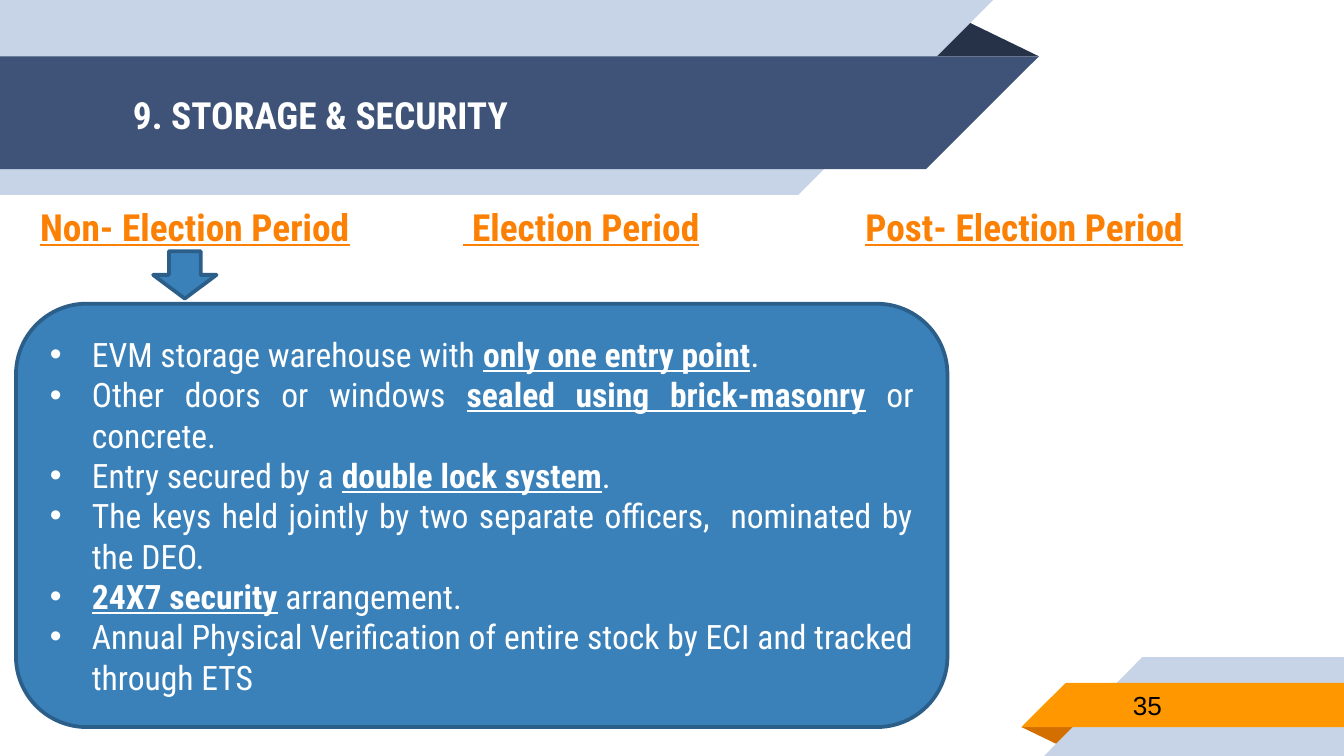
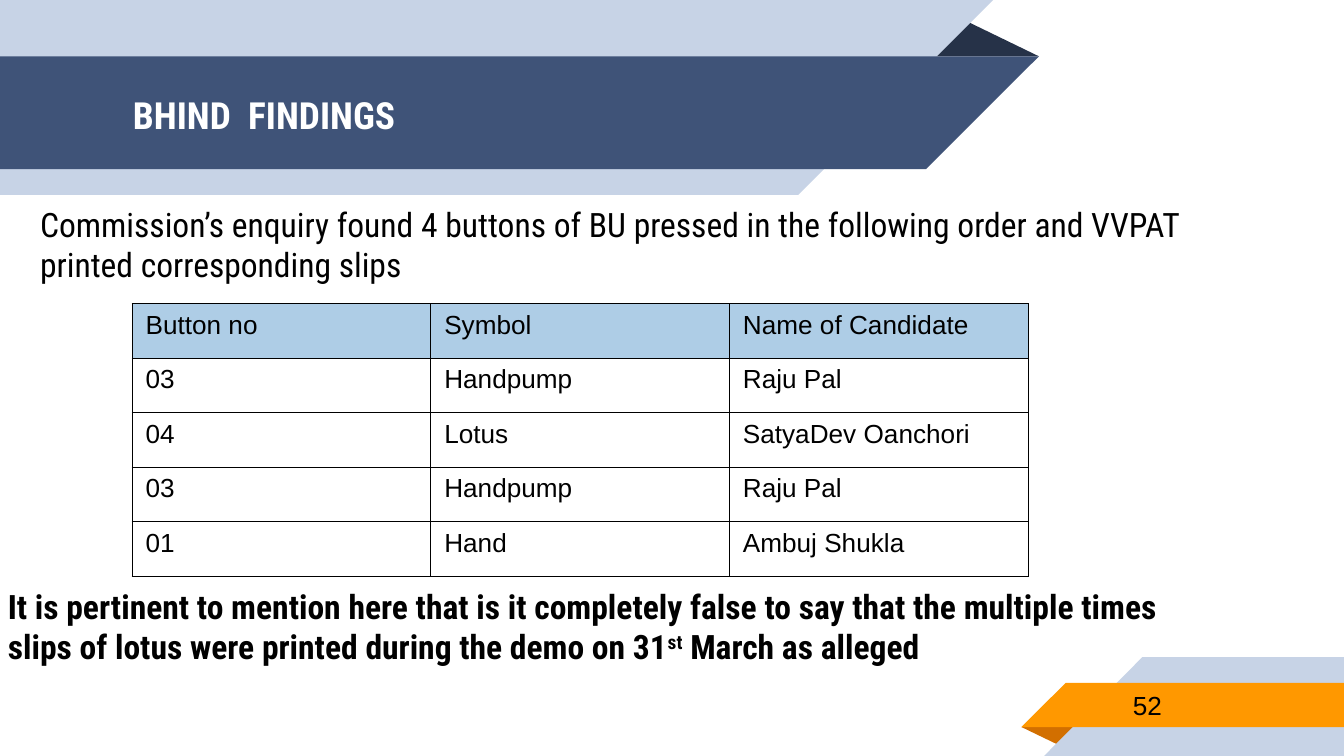
"""Build two slides on voting machine storage and the Bhind enquiry findings."""
from lxml import etree
from pptx import Presentation
from pptx.dml.color import RGBColor
from pptx.enum.shapes import MSO_SHAPE
from pptx.enum.text import MSO_ANCHOR, PP_ALIGN
from pptx.oxml.ns import qn
from pptx.util import Pt

ROUNDED = MSO_SHAPE.ROUNDED_RECTANGLE
DOWN_ARROW = MSO_SHAPE.DOWN_ARROW
MIDDLE = MSO_ANCHOR.MIDDLE
LEFT, JUSTIFY = PP_ALIGN.LEFT, PP_ALIGN.JUSTIFY

COLORS = {
    "pale": "C7D3E6", "navy": "3F5378", "navy_fold": "263248",
    "orange": "FF9800", "orange_fold": "D26F00", "heading": "FC8004",
    "blue": "3A81BA", "blue_edge": "2B5F8A", "table_head": "AECDE6",
    "white": "FFFFFF", "black": "000000",
}
HEAD_FONT, PLAIN_FONT = "Roboto Condensed", "Arial"

BANDS = [
    ("navy_fold", [(495.4, 30.2), (556.6, 30.2), (515.2, 10.1)]),
    ("pale", [(0, 0), (532.1, 0), (427.7, 104.4), (0, 104.4)]),
    ("navy", [(0, 30.2), (556.6, 30.2), (496.1, 90.7), (0, 90.7)]),
    ("orange_fold", [(547.2, 389.5), (578.2, 389.5), (568.1, 399.6)]),
    ("pale", [(559.4, 405), (612, 352.1), (720, 352.1), (720, 405)]),
    ("orange", [(547.2, 389.5), (571, 365.8), (720, 365.8), (720, 389.5)]),
]
PERIODS = [
    ("Non- Election Period", 14.4, 266),
    (" Election Period", 241.2, 210),
    ("Post- Election Period", 456.5, 244),
]
STORAGE_RULES = [
    [("EVM storage warehouse with ", False), ("only one entry point", True), (".", False)],
    [("Other doors or windows ", False), ("sealed using brick-masonry", True),
     (" or concrete.", False)],
    [("Entry secured by a ", False), ("double lock system", True), (".", False)],
    [("The keys held jointly by two separate officers,  nominated by the DEO.", False)],
    [("24X7 security", True), (" arrangement.", False)],
    [("Annual Physical Verification of entire stock by ECI and tracked through ETS", False)],
]
BUTTON_ORDER = [
    ("Button no", "Symbol", "Name of Candidate"),
    ("03", "Handpump", "Raju Pal"),
    ("04", "Lotus", "SatyaDev Oanchori"),
    ("03", "Handpump", "Raju Pal"),
    ("01", "Hand", "Ambuj Shukla"),
]


def rgb(name):
    """Return the named colour."""
    return RGBColor.from_string(COLORS[name])


def style(paragraph, size, color="black", name=HEAD_FONT, bold=False, underline=False):
    """Set the font of a whole paragraph."""
    font = paragraph.font
    font.name, font.size = name, Pt(size)
    font.bold, font.underline = bold, underline
    font.color.rgb = rgb(color)


def paint(shape, fill, edge=None):
    """Fill a shape and draw its 2 pt edge, if any."""
    shape.shadow.inherit = False
    shape.fill.solid()
    shape.fill.fore_color.rgb = rgb(fill)
    if edge:
        shape.line.color.rgb = rgb(edge)
        shape.line.width = Pt(2)
    else:
        shape.line.fill.background()


def prepare_layout(layout, slide):
    """Draw the header and footer bands and move them to the layout."""
    for holder in list(layout.placeholders)[1:]:
        layout.shapes.element.remove(holder.element)
    for color, corners in BANDS:
        (start_x, start_y), *others = [(Pt(x), Pt(y)) for x, y in corners]
        outline = slide.shapes.build_freeform(start_x, start_y)
        outline.add_line_segments(others)
        band = outline.convert_to_shape()
        paint(band, color)
        layout.shapes.element.append(band.element)


def add_text(slide, text, left, top, width, height, size, **font):
    """Add a wrapping text box and return its paragraph."""
    box = slide.shapes.add_textbox(Pt(left), Pt(top), Pt(width), Pt(height))
    box.text_frame.word_wrap = True
    paragraph = box.text_frame.paragraphs[0]
    paragraph.text = text
    style(paragraph, size, **font)
    return paragraph


def set_frame(slide, heading, number):
    """Fill in the title and the slide number."""
    title = slide.shapes.title
    title.left, title.top, title.width, title.height = Pt(64), Pt(31), Pt(414), Pt(60.5)
    frame = title.text_frame
    frame.text = heading
    frame.vertical_anchor = MIDDLE
    frame.margin_left = frame.margin_right = Pt(7.2)
    frame.margin_top = frame.margin_bottom = Pt(7.2)
    frame.paragraphs[0].alignment = LEFT
    style(frame.paragraphs[0], 20, "white", bold=True)
    add_text(slide, number, 599.8, 366, 117, 24.6, 14, name=PLAIN_FONT)


def add_rules_panel(slide, rules):
    """Add the rounded panel with the bulleted storage rules."""
    panel = slide.shapes.add_shape(ROUNDED, Pt(8.6), Pt(162.7), Pt(499), Pt(226.8))
    paint(panel, "blue", "blue_edge")
    frame = panel.text_frame
    frame.word_wrap = True
    frame.vertical_anchor = MIDDLE
    for index, rule in enumerate(rules):
        paragraph = frame.add_paragraph() if index else frame.paragraphs[0]
        paragraph.alignment = JUSTIFY
        properties = paragraph._p.get_or_add_pPr()
        properties.set("marL", str(Pt(22.5)))
        properties.set("indent", str(-Pt(22.5)))
        etree.SubElement(properties, qn("a:buFont"), typeface=PLAIN_FONT)
        etree.SubElement(properties, qn("a:buChar"), char="•")
        style(paragraph, 18, "white")
        for text, stressed in rule:
            run = paragraph.add_run()
            run.text = text
            if stressed:
                run.font.bold = run.font.underline = True


def add_borders(cell):
    """Draw thin black lines on the four sides of a cell."""
    properties = cell._tc.get_or_add_tcPr()
    for side in ("lnL", "lnR", "lnT", "lnB"):
        line = etree.SubElement(properties, qn(f"a:{side}"), w=str(Pt(0.75)))
        fill = etree.SubElement(line, qn("a:solidFill"))
        etree.SubElement(fill, qn("a:srgbClr"), val=COLORS["black"])


def add_button_table(slide, rows):
    """Add the table of pressed buttons with a tinted head row."""
    table = slide.shapes.add_table(
        len(rows), len(rows[0]), Pt(70.8), Pt(162.7), Pt(480), Pt(146)).table
    table.first_row = table.horz_banding = False
    for r, row in enumerate(rows):
        for c, text in enumerate(row):
            cell = table.cell(r, c)
            cell.text = text
            style(cell.text_frame.paragraphs[0], 14, name=PLAIN_FONT)
            add_borders(cell)
            cell.fill.solid()
            cell.fill.fore_color.rgb = rgb("white" if r else "table_head")


def build_storage(slide):
    """Build the storage and security slide."""
    set_frame(slide, "9. STORAGE & SECURITY", "35")
    for period, left, width in PERIODS:
        add_text(slide, period, left, 105.8, width, 31.5, 20,
                 color="heading", bold=True, underline=True)
    add_rules_panel(slide, STORAGE_RULES)
    arrow = slide.shapes.add_shape(DOWN_ARROW, Pt(82), Pt(134.6), Pt(34), Pt(25.4))
    paint(arrow, "blue", "blue_edge")


def build_findings(slide):
    """Build the Bhind findings slide."""
    set_frame(slide, "BHIND  FINDINGS", "52")
    add_text(slide, "Commission’s enquiry found 4 buttons of BU pressed in the following "
             "order and VVPAT printed corresponding slips", 14.4, 105.8, 652, 72.7, 18)
    add_button_table(slide, BUTTON_ORDER)
    verdict = add_text(
        slide, "It is pertinent to mention here that is it completely false to say that the "
        "multiple times slips of lotus were printed during the demo on 31",
        -2.9, 310.3, 652, 72.7, 18, bold=True)
    ordinal = verdict.add_run()
    ordinal.text = "st"
    ordinal._r.get_or_add_rPr().set("baseline", "30000")
    verdict.add_run().text = " March as alleged"


def main():
    """Build and save the presentation."""
    deck = Presentation()
    deck.slide_width, deck.slide_height = Pt(720), Pt(405)
    layout = deck.slide_layouts[5]
    storage = deck.slides.add_slide(layout)
    prepare_layout(layout, storage)
    build_storage(storage)
    build_findings(deck.slides.add_slide(layout))
    deck.save("out.pptx")


if __name__ == "__main__":
    main()
